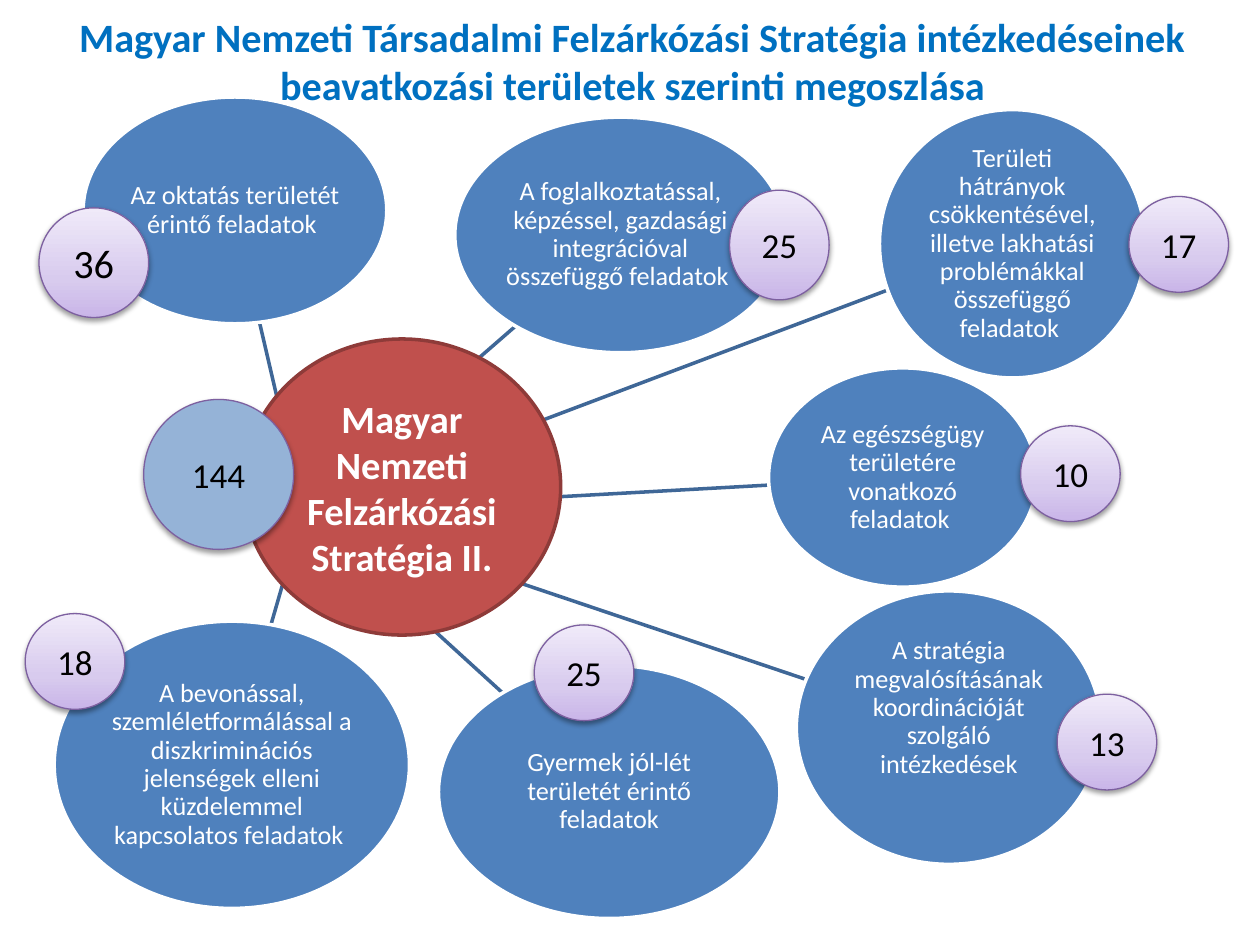
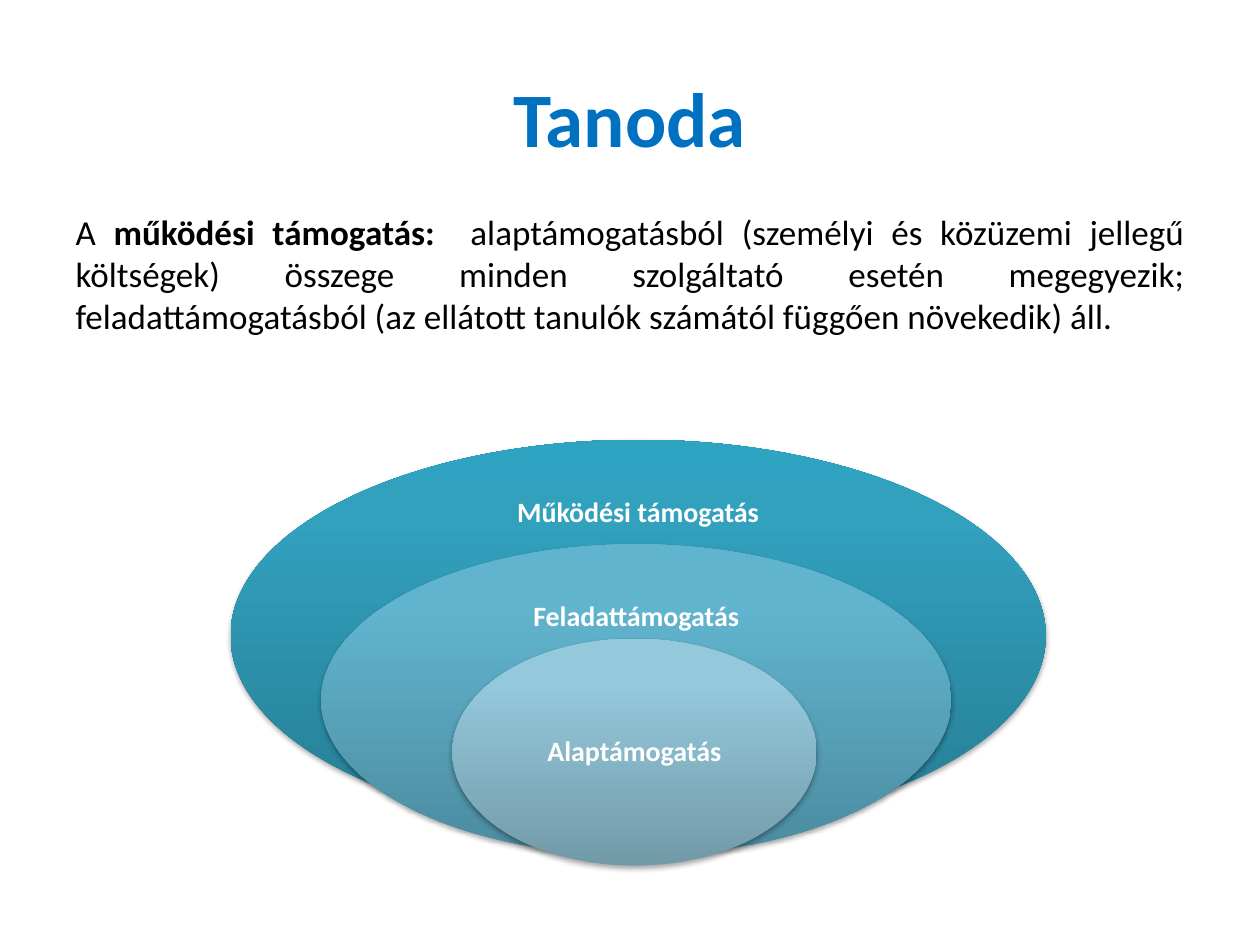
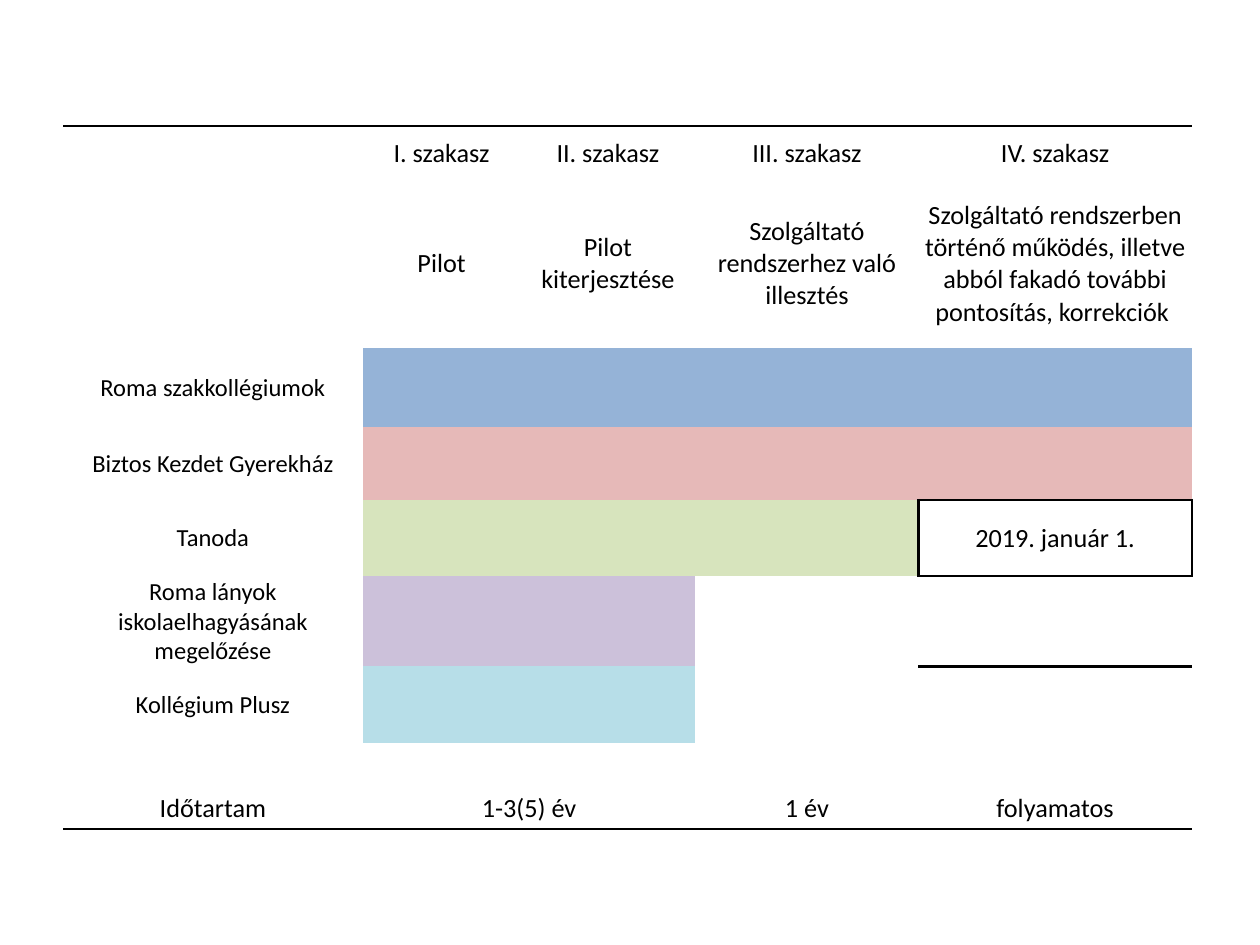
from lxml import etree
from pptx import Presentation
from pptx.dml.color import RGBColor
from pptx.enum import shapes, text
from pptx.oxml import ns
from pptx import util as u

COLORS = {
    "white": "FFFFFF", "black": "000000", "title": "0070C0",
    "area": "4F81BD", "spoke": "3F6797", "hub": "C0504D", "hub_edge": "8E3B39",
    "total": "95B3D7", "badge_edge": "7D60A0",
    "blue": "95B3D7", "pink": "E6B9B8", "green": "D7E4BD",
    "violet": "CCC1DA", "aqua": "B7DEE8",
}
GRADIENTS = {
    "badge": ((0, "C9B5E8"), (35, "D8CBEE"), (100, "F0EAF9")),
    "outer": ((0, "267C93"), (80, "32A1BE"), (100, "2FA3C2")),
    "middle": ((0, "4B8B9F"), (80, "61B4CE"), (100, "5FB6D1")),
    "inner": ((0, "729AA8"), (80, "94C8DB"), (100, "93C9DD")),
}
FONT = "Calibri"
COLUMNS, ROWS = 100, 75
NO_STYLE = "{2D5ABB26-0587-4C30-8999-92F81FD0307C}"


def add_xml(parent, tag, **attributes):
    child = etree.SubElement(parent, ns.qn(tag))
    for name, value in attributes.items():
        child.set(name, str(value))
    return child


def rgb(name):
    return RGBColor.from_string(COLORS[name])


class Deck:
    def __init__(self):
        self.presentation = Presentation()
        self.presentation.slide_width = u.Inches(10)
        self.presentation.slide_height = u.Inches(7.5)
        self.column = self.presentation.slide_width / COLUMNS
        self.row = self.presentation.slide_height / ROWS
        self.slide = None

    def new_slide(self, layout):
        layouts = self.presentation.slide_layouts
        self.slide = self.presentation.slides.add_slide(layouts[layout])

    def place(self, left, top, width, height):
        return [round(value * unit) for value, unit in
                zip((left, top, width, height), (self.column, self.row) * 2)]

    def add_text(self, frame, runs, size, color="black", bold=False,
                 align=text.PP_ALIGN.CENTER, **formats):
        paragraph = frame.paragraphs[0]
        paragraph.alignment = align
        for name, value in formats.items():
            setattr(paragraph, name, value)
        if isinstance(runs, str):
            runs = [(runs, bold)]
        for words, strong in runs:
            run = paragraph.add_run()
            run.text = words
            values = {"name": FONT, "size": u.Pt(size), "bold": strong}
            for name, value in values.items():
                setattr(run.font, name, value)
            run.font.color.rgb = rgb(color)
        return paragraph

    def placeholder(self, index, box, runs, size, **formats):
        shape = self.slide.placeholders[index]
        values = dict(zip(("left", "top", "width", "height"), self.place(*box)))
        for name, value in values.items():
            setattr(shape, name, value)
        shape.text_frame.auto_size = text.MSO_AUTO_SIZE.NONE
        paragraph = self.add_text(shape.text_frame, runs, size, **formats)
        shape.element.getparent().append(shape.element)
        return paragraph

    def title(self, box, words, size):
        self.placeholder(0, box, words, size, color="title", bold=True)

    def body(self, box, runs, size):
        paragraph = self.placeholder(1, box, runs, size, align=text.PP_ALIGN.JUSTIFY,
                                     space_before=u.Pt(4))
        properties = paragraph._p.get_or_add_pPr()
        properties.set("marL", "0")
        properties.set("indent", "0")
        add_xml(properties, "a:buNone")

    def ellipse(self, box, words, size, fill, line=None, weight=2, shadow=0,
                insets=(0.1, 0.1, 0.1, 0.1), anchor=text.MSO_ANCHOR.MIDDLE, **formats):
        shape = self.slide.shapes.add_shape(shapes.MSO_SHAPE.OVAL, *self.place(*box))
        if fill in GRADIENTS:
            self.gradient(shape, GRADIENTS[fill])
        else:
            shape.fill.solid()
            shape.fill.fore_color.rgb = rgb(fill)
        if line:
            shape.line.color.rgb = rgb(line)
            shape.line.width = u.Pt(weight)
        else:
            shape.line.fill.background()
        shape.shadow.inherit = False
        if shadow:
            self.shadow(shape, shadow)
        frame = shape.text_frame
        left, top, right, bottom = self.place(*insets)
        values = {"margin_left": left, "margin_top": top, "margin_right": right,
                  "margin_bottom": bottom, "vertical_anchor": anchor, "word_wrap": True}
        for name, value in values.items():
            setattr(frame, name, value)
        self.add_text(frame, words, size, **formats)

    def gradient(self, shape, stops):
        shape.fill.gradient()
        shape.fill.gradient_angle = 90
        stop_list = shape.element.find(".//" + ns.qn("a:gsLst"))
        for stop in list(stop_list):
            stop_list.remove(stop)
        for position, color in stops:
            stop = add_xml(stop_list, "a:gs", pos=position * 1000)
            add_xml(stop, "a:srgbClr", val=color)

    def shadow(self, shape, opacity):
        effects = shape.element.find(".//" + ns.qn("a:effectLst"))
        outer = add_xml(effects, "a:outerShdw", blurRad=u.Pt(3.1), dist=u.Pt(1.6),
                        dir=90 * 60000, rotWithShape=0)
        color = add_xml(outer, "a:srgbClr", val=COLORS["black"])
        add_xml(color, "a:alpha", val=opacity * 1000)

    def connector(self, start, end):
        line = self.slide.shapes.add_connector(
            shapes.MSO_CONNECTOR.STRAIGHT, *self.place(*start, *end))
        line.line.color.rgb = rgb("spoke")
        line.line.width = u.Pt(2)
        add_xml(line.element.spPr, "a:effectLst")

    def table(self, box, widths, heights):
        frame = self.slide.shapes.add_table(len(heights), len(widths), *self.place(*box))
        frame.element.find(".//" + ns.qn("a:tableStyleId")).text = NO_STYLE
        table = frame.table
        table.first_row = table.horz_banding = False
        for column, width in zip(table.columns, widths):
            column.width = round(width * self.column)
        for row, height in zip(table.rows, heights):
            row.height = round(height * self.row)
        return table

    def cell(self, cell, words, size, fill, sides):
        properties = cell._tc.get_or_add_tcPr()
        for side in sides:
            line = add_xml(properties, "a:ln" + side, w=u.Pt(1.5))
            add_xml(add_xml(line, "a:solidFill"), "a:srgbClr", val=COLORS["black"])
        cell.fill.solid()
        cell.fill.fore_color.rgb = rgb(fill)
        margin = u.Inches(0.01)
        values = {"margin_left": margin, "margin_right": margin, "margin_top": margin,
                  "margin_bottom": 0, "vertical_anchor": text.MSO_ANCHOR.MIDDLE}
        for name, value in values.items():
            setattr(cell, name, value)
        if words:
            self.add_text(cell.text_frame, words, size)


def strategy_slide(deck):
    deck.new_slide(5)
    spokes = [
        ((28.6, 44.7), (39.9, 55)), ((28.6, 42), (63.9, 53.9)),
        ((28.6, 40.3), (61, 38.5)), ((28.6, 38.8), (70.5, 23)),
        ((28.6, 36.6), (40.9, 25.9)), ((22.8, 45.1), (21.5, 49.6)),
        ((23, 35.9), (20.6, 25.6)),
    ]
    for start, end in spokes:
        deck.connector(start, end)

    areas = [
        ((6.6, 7.7, 24.1, 18), "Az oktatás területét érintő feladatok ", 0.1),
        ((4.3, 49.3, 28.2, 22.8), "A bevonással, szemléletformálással a diszkriminációs "
         "jelenségek elleni küzdelemmel kapcsolatos feladatok ", 0.1),
        ((36.1, 9.3, 26.3, 18.7), "A foglalkoztatással, képzéssel, gazdasági "
         "integrációval összefüggő feladatok ", 0.1),
        ((69.8, 8.7, 21.1, 21.3), "Területi hátrányok csökkentésével, illetve lakhatási "
         "problémákkal összefüggő feladatok ", 0.1),
        ((61, 29.2, 21.3, 17.4), "Az egészségügy területére vonatkozó feladatok ", 0.1),
        ((63.2, 46.9, 24.2, 21.7), "A stratégia megvalósításának koordinációját "
         "szolgáló intézkedések", 3.2),
        ((34.8, 52.8, 27.1, 20.1), "Gyermek jól-lét területét érintő feladatok", 0.1),
    ]
    for box, words, bottom in areas:
        deck.ellipse(box, words, 15, "area", line="white", color="white",
                     insets=(0.1, 0.1, 0.1, bottom), line_spacing=0.9)

    deck.ellipse((19.3, 26.9, 25.2, 23.5), "Magyar Nemzeti Felzárkózási Stratégia II.", 22,
                 "hub", line="hub_edge", color="white", bold=True,
                 insets=(1.3, 0.6, 1.3, 0.6))

    small = (7.9, 7.6)
    badges = [
        ((3.1, 16.5), (8.7, 8.7), "36", 23, "badge"),
        ((57.9, 15.1), (7.9, 8.7), "25", 20, "badge"),
        ((11.4, 31.7), (11.9, 11.9), "144", 20, "total"),
        ((81, 33.8), small, "10", 20, "badge"),
        ((89.6, 15.6), small, "17", 20, "badge"),
        ((83.9, 55.1), small, "13", 20, "badge"),
        ((42.4, 49.6), small, "25", 20, "badge"),
        ((2, 48.7), small, "18", 20, "badge"),
    ]
    for corner, extent, count, size, fill in badges:
        deck.ellipse(corner + extent, count, size, fill, line="badge_edge",
                     weight=0.75, shadow=38)
    deck.title((2.6, 1.4, 95.3, 6.8), "Magyar Nemzeti Társadalmi Felzárkózási Stratégia "
               "intézkedéseinek beavatkozási területek szerinti megoszlása", 23)


def support_slide(deck):
    deck.new_slide(1)
    deck.title((5, 3, 90, 12.5), "Tanoda", 44)
    top, middle = text.MSO_ANCHOR.TOP, text.MSO_ANCHOR.MIDDLE
    layers = [
        ((18.3, 34.9, 64.7, 31.1), "Működési támogatás", "outer", top, 0.1),
        ((25.5, 43.2, 50, 24.7), "Feladattámogatás", "middle", top, 1),
        ((35.9, 50.7, 28.9, 18), "Alaptámogatás", "inner", middle, 0.1),
    ]
    for box, words, fill, anchor, inset in layers:
        deck.ellipse(box, words, 16, fill, shadow=35, anchor=anchor, color="white",
                     bold=True, insets=(0.1, inset, 0.1, 0.1), line_spacing=0.9)
    deck.body((5, 16.2, 90, 18.9), [
        ("A ", False), ("működési támogatás:", True),
        ("  alaptámogatásból (személyi és közüzemi jellegű költségek) összege minden "
         "szolgáltató esetén megegyezik; feladattámogatásból (az ellátott tanulók "
         "számától függően növekedik) áll. ", False)], 20)


def schedule_slide(deck):
    deck.new_slide(6)
    rows = [
        ("", "I. szakasz", "II. szakasz", "III. szakasz", "IV. szakasz"),
        ("", "Pilot", "Pilot kiterjesztése", "Szolgáltató rendszerhez való illesztés",
         "Szolgáltató rendszerben történő működés, illetve abból fakadó további "
         "pontosítás, korrekciók "),
        ("Roma szakkollégiumok", "", "", "", ""),
        ("Biztos Kezdet Gyerekház", "", "", "", ""),
        ("Tanoda", "", "", "", "2019. január 1."),
        ("Roma lányok iskolaelhagyásának megelőzése", "", "", "", ""),
        ("Kollégium Plusz", "", "", "", ""),
        ("", "", "", "", ""),
        ("Időtartam", "1-3(5) év", "", "1 év", "folyamatos"),
    ]
    bars = {2: ("blue", 4), 3: ("pink", 4), 4: ("green", 3),
            5: ("violet", 2), 6: ("aqua", 2)}
    borders = {(3, 4): "B", (4, 3): "R", (4, 4): "LRTB", (5, 4): "T"}
    last = len(rows) - 1
    for column in range(len(rows[0])):
        borders[0, column] = "T"
        borders[last, column] = "B"

    table = deck.table((5, 10, 89.7, 55.7), (23.8, 12.5, 13.9, 17.7, 21.7),
                       (4.2, 13.4, 6.3, 5.8, 6, 6.5, 6.1, 3.4, 3.4))
    for row, entries in enumerate(rows):
        color, length = bars.get(row, ("white", 0))
        for column, words in enumerate(entries):
            fill = color if 1 <= column <= length else "white"
            size = 14 if row in bars and column == 0 else 15
            deck.cell(table.cell(row, column), words, size, fill,
                      borders.get((row, column), ""))
    table.cell(last, 1).merge(table.cell(last, 2))


def main():
    deck = Deck()
    strategy_slide(deck)
    support_slide(deck)
    schedule_slide(deck)
    deck.presentation.save("out.pptx")


if __name__ == "__main__":
    main()
